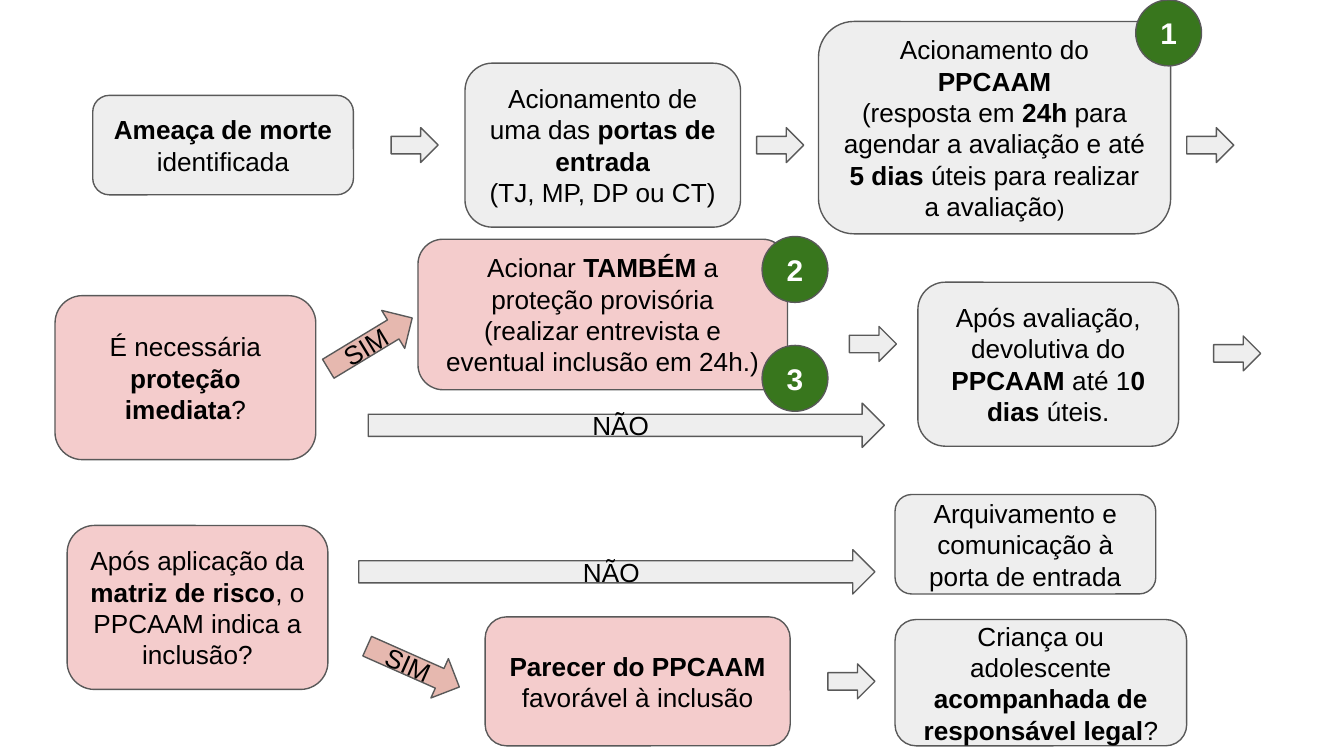
from pptx import Presentation
from pptx.dml.color import RGBColor
from pptx.enum.shapes import MSO_SHAPE
from pptx.enum.text import MSO_ANCHOR, PP_ALIGN
from pptx.util import Inches, Pt

GREY, PINK, ROSE, GREEN = "EEEEEE", "F4CCCC", "E6B8AF", "38761D"
EDGE, BLACK, WHITE = "595959", "000000", "FFFFFF"
BOLD, SMALL = {"bold": True}, {"size": 12}

BOXES = [
    ((0.69, 0.71, 1.94, 0.74), GREY,
     [[("Ameaça de morte", BOLD), (" identificada", {})]]),
    ((3.46, 0.47, 2.05, 1.22), GREY,
     [[("Acionamento de uma das ", {}), ("portas de entrada", BOLD)],
      [("(TJ, MP, DP ou CT)", {})]]),
    ((6.09, 0.16, 2.62, 1.58), GREY,
     [[("Acionamento do ", {}), ("PPCAAM", BOLD)],
      [("(resposta em ", {}), ("24h ", BOLD),
       ("para agendar a avaliação e até ", {}), ("5 dias", BOLD),
       (" úteis para realizar a avaliação", {}), (")", SMALL)]]),
    ((0.41, 2.2, 1.94, 1.22), PINK,
     [[("É necessária ", {}), ("proteção imediata", BOLD), ("?", {})]]),
    ((3.11, 1.78, 2.75, 1.12), PINK,
     [[("Acionar ", {}), ("TAMBÉM ", BOLD), ("a proteção provisória", {})],
      [("(realizar entrevista e eventual inclusão em 24h.)", {})]]),
    ((6.83, 2.1, 1.94, 1.22), GREY,
     [[("Após avaliação, devolutiva do ", {}), ("PPCAAM ", BOLD),
       ("até 1", {}), ("0 dias ", BOLD), ("úteis.", {})]]),
    ((0.5, 3.91, 1.94, 1.22), PINK,
     [[("Após aplicação da ", {}), ("matriz de risco", BOLD),
       (", o PPCAAM indica a inclusão?", {})]]),
    ((3.61, 4.59, 2.27, 0.96), PINK,
     [[("Parecer do PPCAAM ", BOLD), ("favorável à inclusão", {})]]),
    ((6.66, 3.68, 1.94, 0.74), GREY,
     [[("Arquivamento e comunicação à porta de entrada", {})]]),
    ((6.66, 4.61, 2.17, 0.94), GREY,
     [[("Criança ou adolescente ", {}),
       ("acompanhada de responsável legal", BOLD), ("?", {})]]),
]
STEPS = [(2.91, 0.95), (5.63, 0.95), (8.83, 0.95),
         (6.32, 2.43), (9.03, 2.5), (6.16, 4.94)]
ANSWERS = [
    ((2.39, 2.39, 0.73, 0.33), ROSE, "SIM", 328.8),
    ((2.74, 3, 3.84, 0.33), GREY, "NÃO", 0),
    ((2.7, 4.8, 0.75, 0.32), ROSE, "SIM", 23.9),
    ((2.67, 4.09, 3.84, 0.33), GREY, "NÃO", 0),
]
BADGES = [(8.45, 0), (5.67, 1.76), (5.67, 2.57)]


def paint(fill, color):
    """Give a fill one solid colour."""
    fill.solid()
    fill.fore_color.rgb = RGBColor.from_string(color)


def draw(slide, kind, place, color, paras=(), ink=BLACK, size=14):
    """Add an outlined shape with centred paragraphs of styled runs."""
    shape = slide.shapes.add_shape(kind, *map(Inches, place))
    shape.shadow.inherit = False
    paint(shape.fill, color)
    paint(shape.line.fill, EDGE)
    shape.line.width = Pt(0.75)
    frame = shape.text_frame
    frame.word_wrap = True
    frame.vertical_anchor = MSO_ANCHOR.MIDDLE
    frame.margin_left = frame.margin_right = Inches(0.1)
    frame.margin_top = frame.margin_bottom = Inches(0.1)
    for i, runs in enumerate(paras):
        para = frame.add_paragraph() if i else frame.paragraphs[0]
        para.alignment = PP_ALIGN.CENTER
        for text, style in runs:
            run = para.add_run()
            run.text = text
            font = run.font
            font.name = "Arial"
            font.size = Pt(style.get("size", size))
            font.bold = style.get("bold", False)
            font.color.rgb = RGBColor.from_string(ink)
    return shape


def main():
    """Build the flow chart slide and save it."""
    deck = Presentation()
    deck.slide_width = Inches(10)
    deck.slide_height = deck.slide_width * 9 // 16
    slide = deck.slides.add_slide(deck.slide_layouts[6])
    paint(slide.background.fill, WHITE)
    for place, color, paras in BOXES:
        draw(slide, MSO_SHAPE.ROUNDED_RECTANGLE, place, color, paras)
    for spot in STEPS:
        draw(slide, MSO_SHAPE.RIGHT_ARROW, (*spot, 0.35, 0.26), GREY)
    for place, color, word, angle in ANSWERS:
        arrow = draw(slide, MSO_SHAPE.RIGHT_ARROW, place, color, [[(word, {})]])
        arrow.rotation = angle
    for number, spot in enumerate(BADGES, 1):
        draw(slide, MSO_SHAPE.OVAL, (*spot, 0.49, 0.49), GREEN,
             [[(str(number), BOLD)]], WHITE, 16)
    deck.save("out.pptx")


if __name__ == "__main__":
    main()
